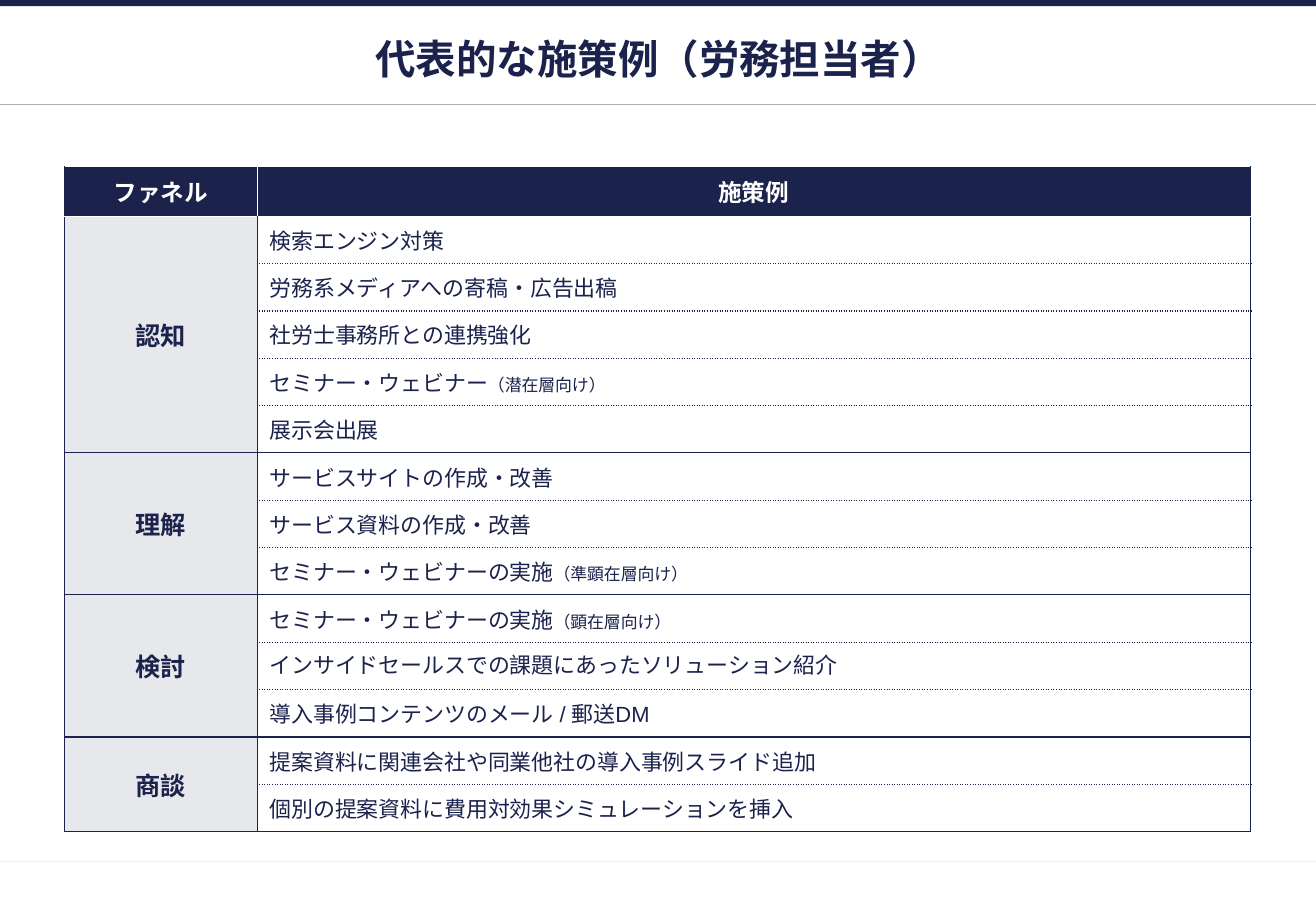
from lxml import etree
from pptx import Presentation
from pptx.dml.color import RGBColor
from pptx.enum.shapes import MSO_CONNECTOR, MSO_SHAPE
from pptx.enum.text import MSO_ANCHOR, PP_ALIGN
from pptx.oxml.ns import qn
from pptx.util import Inches, Pt

CENTER, LEFT = PP_ALIGN.CENTER, PP_ALIGN.LEFT
MIDDLE = MSO_ANCHOR.MIDDLE
STRAIGHT, RECTANGLE = MSO_CONNECTOR.STRAIGHT, MSO_SHAPE.RECTANGLE

TITLE = "代表的な施策例（労務担当者）"
HEADERS = ["ファネル", "施策例"]
# Each measure is (wording, target audience note)
FUNNEL = [
    ("認知", [
        ("検索エンジン対策", ""),
        ("労務系メディアへの寄稿・広告出稿", ""),
        ("社労士事務所との連携強化", ""),
        ("セミナー・ウェビナー", "（潜在層向け）"),
        ("展示会出展", ""),
    ]),
    ("理解", [
        ("サービスサイトの作成・改善", ""),
        ("サービス資料の作成・改善", ""),
        ("セミナー・ウェビナーの実施", "（準顕在層向け）"),
    ]),
    ("検討", [
        ("セミナー・ウェビナーの実施", "（顕在層向け）"),
        ("インサイドセールスでの課題にあったソリューション紹介", ""),
        ("導入事例コンテンツのメール / 郵送DM", ""),
    ]),
    ("商談", [
        ("提案資料に関連会社や同業他社の導入事例スライド追加", ""),
        ("個別の提案資料に費用対効果シミュレーションを挿入", ""),
    ]),
]
SINGLE_SPACED = "インサイドセールスでの課題にあったソリューション紹介"

FONT = "Arial"
COLORS = {"navy": "1B224C", "white": "FFFFFF", "rule": "AFAFAF", "footer": "F2F2F2"}
STYLES = {
    "title": {"size": Pt(24), "bold": True},
    "header": {"size": Pt(14), "bold": True},
    "stage": {"size": Pt(15), "bold": True},
    "measure": {"size": Pt(13), "bold": False},
    "note": {"size": Pt(10), "bold": False},
}
# Border kinds: colour, width in points, dash
EDGE = ("navy", 1, "solid")
DIVIDER = ("navy", 0.75, "solid")
DOTTED = ("navy", 1, "sysDot")
PALE = ("white", 0.75, "solid")

SLIDE_WIDTH, SLIDE_HEIGHT = 10.84, 7.5
RULES = [(7.09, "footer"), (0.86, "rule")]
TABLE_LEFT, TABLE_TOP = 0.53, 1.37
COLUMN_WIDTHS = [1.59, 8.18]
HEADER_HEIGHT, ROW_HEIGHT = 0.41, 0.39


def rgb(color):
    return RGBColor.from_string(COLORS[color])


def write(paragraph, wording, style, color="navy"):
    run = paragraph.add_run()
    run.text = wording
    run.font.name = FONT
    for attribute, value in STYLES[style].items():
        setattr(run.font, attribute, value)
    run.font.color.rgb = rgb(color)
    east_asian = etree.SubElement(run.font._element, qn("a:ea"))
    east_asian.set("typeface", FONT)


def set_borders(cell, left, right, top, bottom):
    properties = cell._tc.get_or_add_tcPr()
    sides = {"lnL": left, "lnR": right, "lnT": top, "lnB": bottom}
    for side, (color, width, dash) in sides.items():
        line = etree.SubElement(properties, qn(f"a:{side}"), w=str(Pt(width)))
        fill = etree.SubElement(line, qn("a:solidFill"))
        etree.SubElement(fill, qn("a:srgbClr"), val=COLORS[color])
        etree.SubElement(line, qn("a:prstDash"), val=dash)


def fill_cell(cell, color, opacity=100):
    cell.fill.solid()
    cell.fill.fore_color.rgb = rgb(color)
    if opacity < 100:
        tint = cell._tc.tcPr.find(f".//{qn('a:solidFill')}[last()]/{qn('a:srgbClr')}")
        tint = cell._tc.tcPr.findall(qn("a:solidFill"))[0][0]
        etree.SubElement(tint, qn("a:alpha"), val=str(opacity * 1000))


def start_cell(cell, alignment, spacing=1.15):
    """Set the cell's text layout and return its first paragraph."""
    cell.vertical_anchor = MIDDLE
    paragraph = cell.text_frame.paragraphs[0]
    paragraph.alignment = alignment
    paragraph.line_spacing = spacing
    return paragraph


def add_frame(slide):
    """Draw the top band, the two rules and the title."""
    for y, color in RULES:
        rule = slide.shapes.add_connector(
            STRAIGHT, 0, Inches(y), Inches(SLIDE_WIDTH), Inches(y))
        rule.line.color.rgb = rgb(color)
        rule.line.width = Pt(0.75)
        etree.SubElement(rule._element.spPr, qn("a:effectLst"))

    band = slide.shapes.add_shape(RECTANGLE, 0, 0, Inches(SLIDE_WIDTH), Inches(0.05))
    band.shadow.inherit = False
    band.fill.solid()
    band.fill.fore_color.rgb = rgb("navy")
    band.line.fill.background()

    title = slide.shapes.add_textbox(
        Inches(0.5), Inches(0.29), Inches(9.85), Inches(0.39)).text_frame
    layout = {"word_wrap": True, "vertical_anchor": MIDDLE,
              "margin_left": Inches(0.04), "margin_right": Inches(0.04),
              "margin_top": Inches(0.04), "margin_bottom": Inches(0.05)}
    for attribute, value in layout.items():
        setattr(title, attribute, value)
    title.paragraphs[0].alignment = CENTER
    write(title.paragraphs[0], TITLE, "title")


def add_funnel_table(slide):
    measure_count = sum(len(measures) for _, measures in FUNNEL)
    heights = [HEADER_HEIGHT] + [ROW_HEIGHT] * measure_count
    table = slide.shapes.add_table(
        len(heights), len(HEADERS), Inches(TABLE_LEFT), Inches(TABLE_TOP),
        Inches(sum(COLUMN_WIDTHS)), Inches(sum(heights))).table
    table.horz_banding = False
    for column, width in zip(table.columns, COLUMN_WIDTHS):
        column.width = Inches(width)
    for row, height in zip(table.rows, heights):
        row.height = Inches(height)

    header_sides = [(EDGE, PALE), (PALE, EDGE)]
    for column, (header, (left, right)) in enumerate(zip(HEADERS, header_sides)):
        cell = table.cell(0, column)
        set_borders(cell, left, right, PALE, PALE)
        fill_cell(cell, "navy")
        write(start_cell(cell, CENTER), header, "header", "white")

    first = 1
    for stage, measures in FUNNEL:
        last = first + len(measures) - 1
        stage_top = PALE if first == 1 else DIVIDER
        stage_cell = table.cell(first, 0)
        stage_cell.merge(table.cell(last, 0))
        write(start_cell(stage_cell, CENTER), stage, "stage")
        for row, (wording, note) in enumerate(measures, first):
            set_borders(table.cell(row, 0), EDGE, DIVIDER, stage_top, DIVIDER)
            fill_cell(table.cell(row, 0), "navy", opacity=10)

            cell = table.cell(row, 1)
            set_borders(cell, DIVIDER, EDGE,
                        stage_top if row == first else DOTTED,
                        DIVIDER if row == last else DOTTED)
            cell.fill.background()
            spacing = 1.0 if wording == SINGLE_SPACED else 1.15
            paragraph = start_cell(cell, LEFT, spacing)
            write(paragraph, wording, "measure")
            if note:
                write(paragraph, note, "note")
        first = last + 1


def main():
    deck = Presentation()
    deck.slide_width, deck.slide_height = Inches(SLIDE_WIDTH), Inches(SLIDE_HEIGHT)
    slide = deck.slides.add_slide(deck.slide_layouts[6])
    add_frame(slide)
    add_funnel_table(slide)
    deck.save("out.pptx")


if __name__ == "__main__":
    main()
